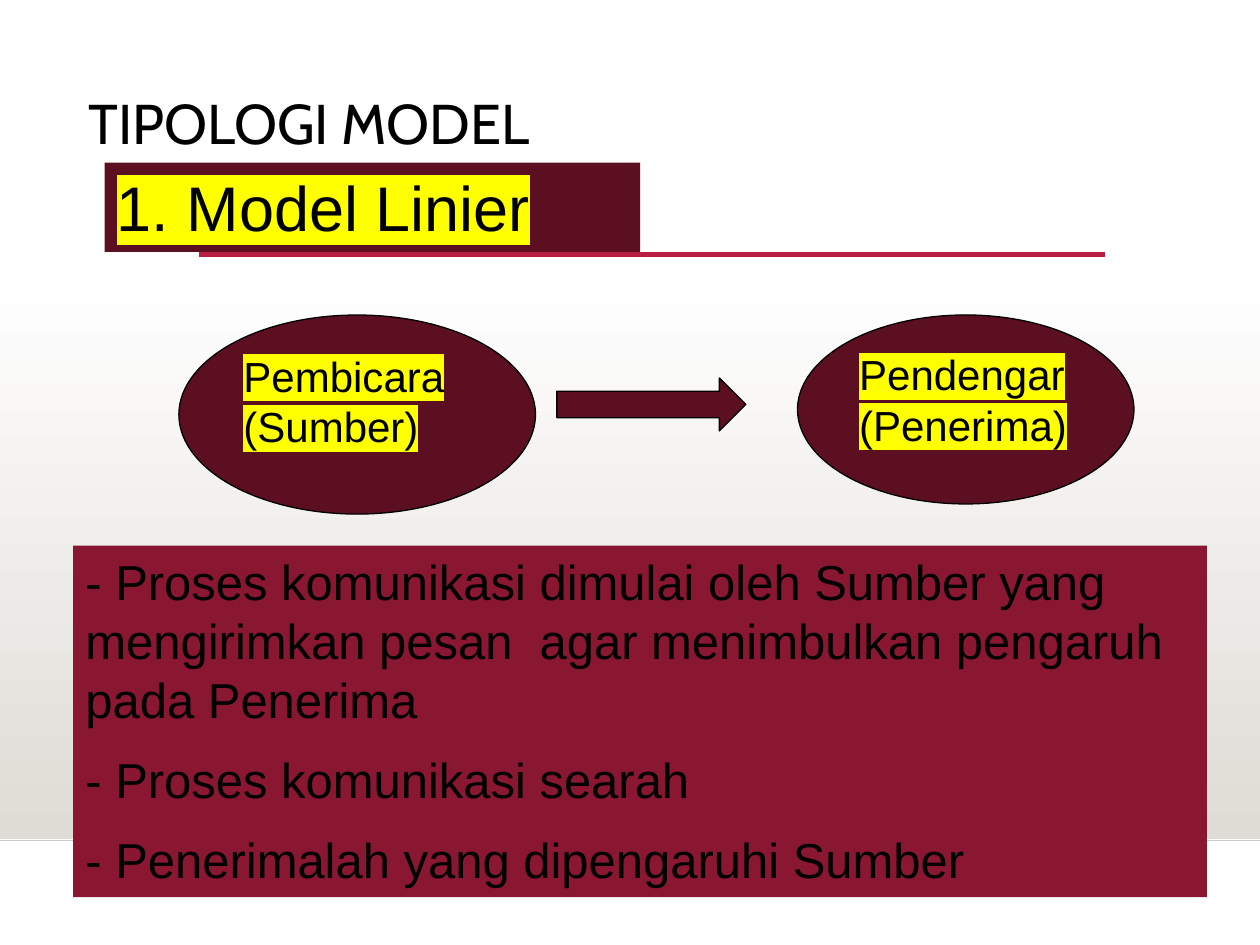
"""Build the slide on the linear communication model."""
from lxml import etree
from pptx import Presentation
from pptx.dml.color import RGBColor
from pptx.enum.shapes import MSO_CONNECTOR, MSO_SHAPE
from pptx.enum.text import MSO_ANCHOR, MSO_AUTO_SIZE, PP_ALIGN
from pptx.oxml.ns import qn
from pptx.util import Inches, Pt

RECTANGLE, OVAL, ARROW = MSO_SHAPE.RECTANGLE, MSO_SHAPE.OVAL, MSO_SHAPE.RIGHT_ARROW
STRAIGHT = MSO_CONNECTOR.STRAIGHT
TOP, BOTTOM = MSO_ANCHOR.TOP, MSO_ANCHOR.BOTTOM
LEFT = PP_ALIGN.LEFT
NO_AUTOFIT = MSO_AUTO_SIZE.NONE
BLACK, YELLOW, WINE = "000000", "FFFF00", "5C0F21"


def color(value):
    """Return the colour for a hex string."""
    return RGBColor.from_string(value)


def write(shape, lines, size, font_name="Arial", anchor=TOP, highlight=None, paragraph_format=None):
    """Put left-aligned black paragraphs into a shape."""
    frame = shape.text_frame
    frame.text = "\n".join(lines)
    frame.word_wrap = True
    frame.auto_size = NO_AUTOFIT
    frame.vertical_anchor = anchor
    for paragraph in frame.paragraphs:
        for name, value in {"alignment": LEFT, **(paragraph_format or {})}.items():
            setattr(paragraph, name, value)
        for run in paragraph.runs:
            for name, value in {"name": font_name, "size": Pt(size)}.items():
                setattr(run.font, name, value)
            run.font.color.rgb = color(BLACK)
            if highlight:
                mark = etree.Element(qn("a:highlight"))
                etree.SubElement(mark, qn("a:srgbClr"), val=highlight)
                run.font._element.find(qn("a:solidFill")).addnext(mark)


presentation = Presentation()
presentation.slide_width = Inches(10)
presentation.slide_height = Inches(7.5)
slide = presentation.slides.add_slide(presentation.slide_layouts[5])

title = slide.shapes.title
title_box = {"left": 0.5, "top": 0.27, "width": 9.17, "height": 1.07}
for name, value in title_box.items():
    setattr(title, name, Inches(value))
title_margins = {"margin_left": 0.2, "margin_top": 0.05, "margin_right": 0.1, "margin_bottom": 0.1}
for name, value in title_margins.items():
    setattr(title.text_frame, name, Inches(value))
write(title, ["TIPOLOGI MODEL"], 32, "Cabin", BOTTOM, paragraph_format={"line_spacing": 0.9})

backdrop = slide.shapes.add_shape(RECTANGLE, Inches(0), Inches(2.2), Inches(10), Inches(4.46))
backdrop.shadow.inherit = False
backdrop.line.fill.background()
backdrop.fill.gradient()
backdrop.fill.gradient_angle = 270
for stop, value in zip(backdrop.fill.gradient_stops, ("FFFFFF", "DFDBD5")):
    stop.color.rgb = color(value)

rules = [(0, 10, 6.67, "CCCCCC", 1), (1.58, 8.77, 2.02, "B71E42", 2.5)]
for start, end, height, line_color, width in rules:
    rule = slide.shapes.add_connector(STRAIGHT, Inches(start), Inches(height), Inches(end), Inches(height))
    rule.line.color.rgb = color(line_color)
    rule.line.width = Pt(width)
    etree.SubElement(rule._element.spPr, qn("a:effectLst"))

explanation = [
    "- Proses komunikasi dimulai oleh Sumber yang mengirimkan pesan  agar menimbulkan pengaruh pada Penerima",
    "- Proses komunikasi searah",
    "- Penerimalah yang dipengaruhi Sumber",
]
marked = {"highlight": YELLOW}
spaced = {"paragraph_format": {"space_after": Pt(12)}}
blocks = [
    (OVAL, (1.42, 2.5, 2.83, 1.58), WINE, True, ["Pembicara", "(Sumber)"], 24, marked),
    (OVAL, (6.33, 2.5, 2.67, 1.5), WINE, True, ["Pendengar", "(Penerima)"], 24, marked),
    (ARROW, (4.42, 3, 1.5, 0.42), WINE, True, [], 24, {}),
    (RECTANGLE, (0.58, 4.33, 9, 2.79), "891731", False, explanation, 28, spaced),
    (RECTANGLE, (0.83, 1.29, 4.25, 0.71), WINE, False, ["1. Model Linier"], 36, marked),
]
for kind, box, fill_color, outlined, lines, size, text_format in blocks:
    shape = slide.shapes.add_shape(kind, *map(Inches, box))
    shape.shadow.inherit = False
    shape.fill.solid()
    shape.fill.fore_color.rgb = color(fill_color)
    if outlined:
        shape.line.color.rgb = color(BLACK)
        shape.line.width = Pt(0.75)
    else:
        shape.line.fill.background()
    if lines:
        write(shape, lines, size, **text_format)

presentation.save("out.pptx")
